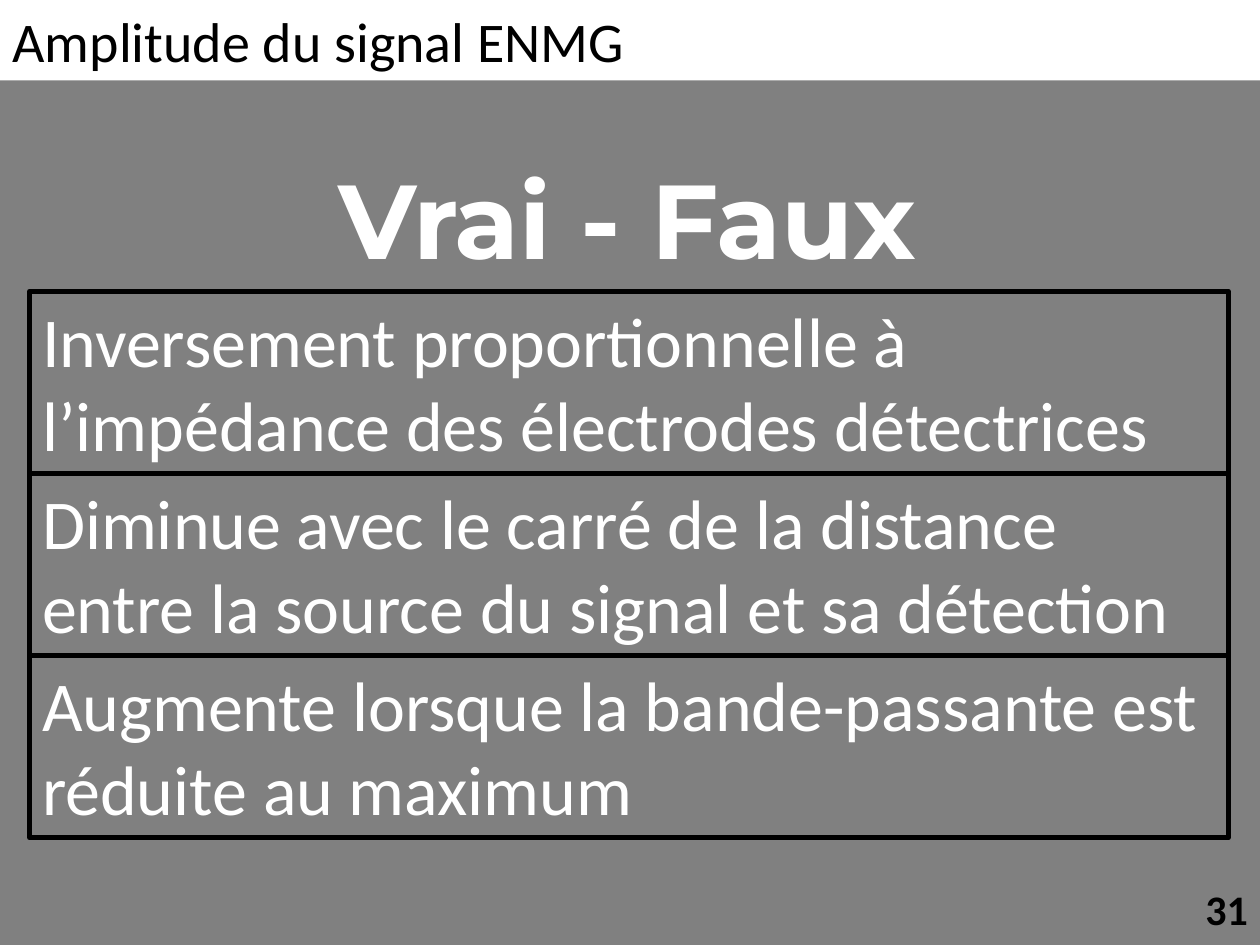
from pptx import Presentation
from pptx import util as u
from pptx.dml.color import RGBColor
from pptx.enum import shapes, text

STATEMENTS = [
    "Inversement proportionnelle à l’impédance des électrodes détectrices",
    "Diminue avec le carré de la distance entre la source du signal et sa détection",
    "Augmente lorsque la bande-passante est réduite au maximum",
]


def paint(fmt, color):
    fmt.solid()
    fmt.fore_color.rgb = RGBColor.from_string(color)


def write(sp, words, size, color, font="Calibri", bold=False,
          align=text.PP_ALIGN.LEFT, anchor=text.MSO_ANCHOR.TOP, wrap=True):
    tf = sp.text_frame
    tf.auto_size = text.MSO_AUTO_SIZE.NONE
    tf.word_wrap = wrap
    tf.vertical_anchor = anchor
    p = tf.paragraphs[0]
    p.alignment = align
    r = p.add_run()
    r.text = words
    r.font.size = u.Pt(size)
    r.font.name = font
    r.font.bold = bold
    paint(r.font.fill, color)


def add_title(s, x, y, w, h):
    sp = s.shapes.title
    sp.left, sp.top, sp.width, sp.height = u.Cm(x), u.Cm(y), u.Cm(w), u.Cm(h)
    paint(sp.fill, "FFFFFF")
    write(sp, "Amplitude du signal ENMG", 32, "000000")


def add_label(s, x, y, w, h, words, size, color, **style):
    sp = s.shapes.add_textbox(u.Cm(x), u.Cm(y), u.Cm(w), u.Cm(h))
    write(sp, words, size, color, bold=True, wrap=False, **style)


def add_statements(s, x, y, w, h):
    row_h = h / len(STATEMENTS)
    for i, words in enumerate(STATEMENTS):
        sp = s.shapes.add_shape(shapes.MSO_SHAPE.RECTANGLE, u.Cm(x),
                                u.Cm(y + i * row_h), u.Cm(w), u.Cm(row_h))
        sp.shadow.inherit = False
        sp.fill.background()
        paint(sp.line.fill, "000000")
        sp.line.width = u.Pt(3)
        write(sp, words, 40, "FFFFFF")


def main():
    prs = Presentation()
    prs.slide_width, prs.slide_height = u.Cm(25.4), u.Cm(19.05)
    s = prs.slides.add_slide(prs.slide_layouts[5])
    paint(s.background.fill, "808080")
    add_title(s, 0, 0, 25.4, 1.62)
    add_label(s, 24.05, 17.68, 1.37, 1.27, "31", 24, "000000")
    add_label(s, 6.12, 3, 13.06, 2.82, "Vrai - Faux", 60, "FFFFFF",
              font="Montserrat", align=text.PP_ALIGN.CENTER)
    add_statements(s, 0.6, 5.87, 24.16, 11.02)
    prs.save("out.pptx")


if __name__ == "__main__":
    main()
